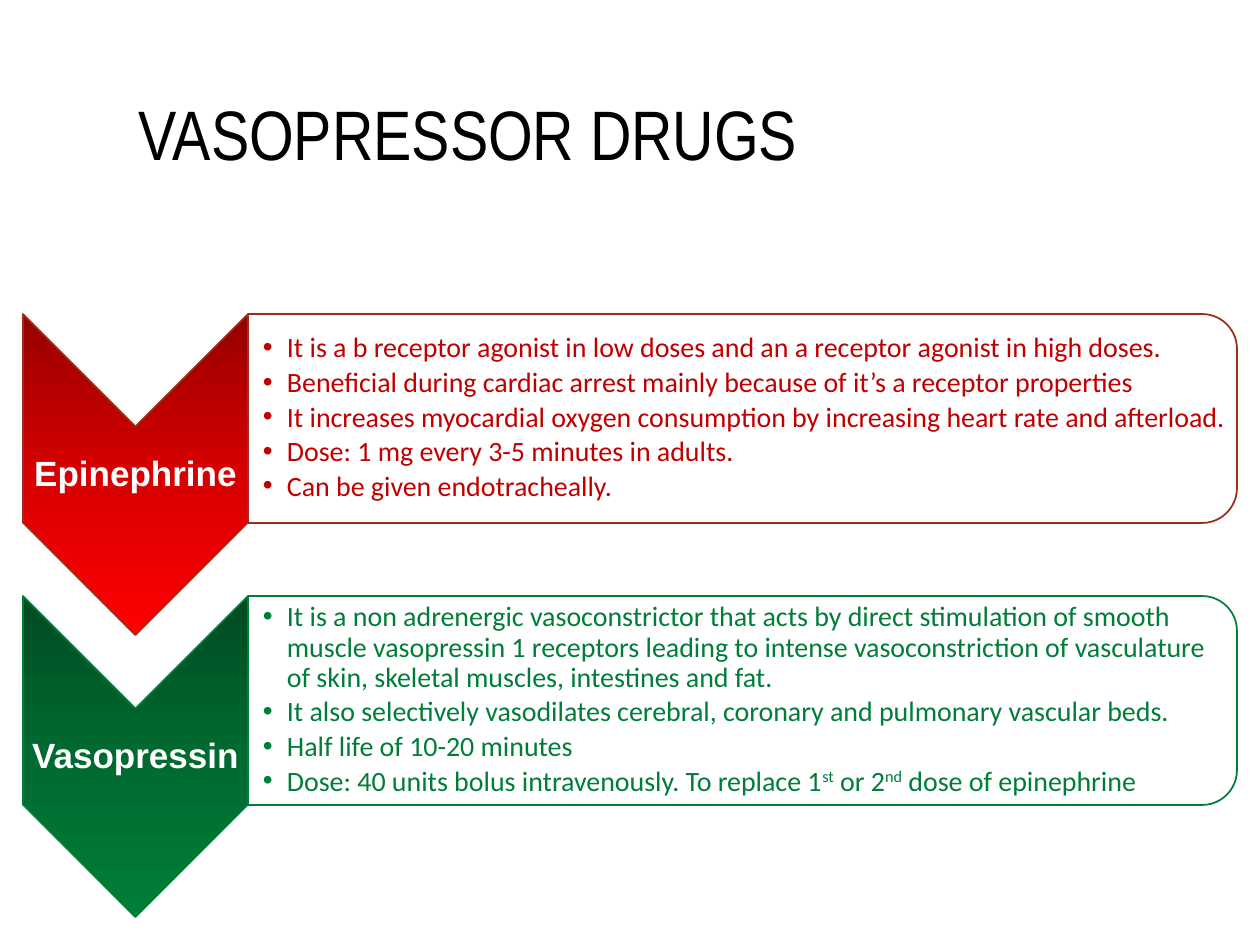
from lxml.etree import SubElement as Sub
from pptx import Presentation
from pptx.dml.color import RGBColor
from pptx.enum.shapes import MSO_SHAPE as Shape
from pptx.enum.text import MSO_ANCHOR as Anchor, PP_ALIGN as Align
from pptx.oxml import parse_xml
from pptx.oxml.ns import nsdecls, qn
from pptx.util import Emu, Pt

WHITE = RGBColor(0xFF, 0xFF, 0xFF)
BLACK = RGBColor(0, 0, 0)
RUST = RGBColor(0x9B, 0x2D, 0x1F)
RED = RGBColor(0xC0, 0, 0)
REDS = [RGBColor(0x97, 0, 0), RGBColor(0xD7, 0, 0), RGBColor(0xFF, 0, 0)]
GREEN = RGBColor(0, 0x7E, 0x39)
GREENS = [RGBColor(0, 0x4B, 0x22), RGBColor(0, 0x6A, 0x30), GREEN]

TOP, STEP = 314, 282

EPI = [
    ["It is a b receptor agonist in low doses and an a receptor agonist in high doses."],
    ["Beneficial during cardiac arrest mainly because of it’s a receptor properties"],
    ["It increases myocardial oxygen consumption by increasing heart rate and afterload."],
    ["Dose: 1 mg every 3-5 minutes in adults."],
    ["Can be given endotracheally."],
]
VASO = [
    ["It is a non adrenergic vasoconstrictor that acts by direct stimulation of smooth "
     "muscle vasopressin 1 receptors leading to intense vasoconstriction of vasculature "
     "of skin, skeletal muscles, intestines and fat."],
    ["It also selectively vasodilates cerebral, coronary and pulmonary vascular beds."],
    ["Half life of 10-20 minutes"],
    ["Dose: 40 units bolus intravenously. To replace 1", "st", " or 2", "nd",
     " dose of epinephrine"],
]
DRUGS = [
    ("Epinephrine", EPI, REDS, RUST, RED),
    ("Vasopressin", VASO, GREENS, GREEN, GREEN),
]


def px(n):
    """Turn pixels into EMU."""
    return Emu(round(n * 914400 / 126))


def add_turned(slide, kind, x, y, w, h, line):
    """Add a shape turned a quarter right that covers the given box."""
    left, top = x + (w - h) / 2, y + (h - w) / 2
    shape = slide.shapes.add_shape(kind, px(left), px(top), px(h), px(w))
    shape.rotation = 90
    shape.shadow.inherit = False
    shape.fill.solid()
    shape.fill.fore_color.rgb = WHITE
    shape.line.color.rgb = line
    shape.line.width = Pt(1)
    return shape


def shade(shape, tones):
    """Fill a shape with evenly spaced tones from top to bottom."""
    gap = 100000 // (len(tones) - 1)
    stops = "".join(f'<a:gs pos="{i * gap}"><a:srgbClr val="{tone}"/></a:gs>'
                    for i, tone in enumerate(tones))
    grad = parse_xml(f'<a:gradFill {nsdecls("a")} rotWithShape="0"><a:gsLst>{stops}'
                     '</a:gsLst><a:lin ang="5400000" scaled="0"/></a:gradFill>')
    props = shape.fill._xPr
    props.replace(props.find(qn("a:solidFill")), grad)


def add_box(slide, x, y, w, h, inset, edge):
    """Add a wrapped, middle-anchored text frame."""
    frame = slide.shapes.add_textbox(px(x), px(y), px(w), px(h)).text_frame
    frame.word_wrap = True
    frame.vertical_anchor = Anchor.MIDDLE
    frame.margin_left = px(inset)
    frame.margin_right = frame.margin_top = frame.margin_bottom = px(edge)
    return frame


def add_run(para, text, font, size, color, bold=False):
    """Add one styled run and return it."""
    para.line_spacing = 0.9
    run = para.add_run()
    run.text = text
    run.font.name = font
    run.font.size = Pt(size)
    run.font.color.rgb = color
    run.font.bold = bold
    return run


def add_list(frame, items, color):
    """Fill a frame with bullets, raising every second run."""
    for i, parts in enumerate(items):
        para = frame.add_paragraph() if i else frame.paragraphs[0]
        para.space_after = Pt(2.5)
        props = para._p.get_or_add_pPr()
        props.set("marL", str(px(24)))
        props.set("indent", str(-px(24)))
        Sub(props, qn("a:buFont"), typeface="Arial")
        Sub(props, qn("a:buChar"), char="•")
        for j, part in enumerate(parts):
            run = add_run(para, part, "Calibri", 16, color)
            if j % 2:
                run.font._element.set("baseline", "30000")


def add_drug(slide, y, name, items, tones, line, color):
    """Add an arrow with its name and the panel of facts beside it."""
    shade(add_turned(slide, Shape.CHEVRON, 23, y, 225, 321, line), tones)
    para = add_box(slide, 23, y + 113, 225, 96, 1, 1).paragraphs[0]
    para.alignment = Align.CENTER
    add_run(para, name, "Arial", 20, WHITE, True)
    add_turned(slide, Shape.ROUND_2_SAME_RECTANGLE, 248, y, 989, 209, line)
    add_list(add_box(slide, 248, y + 10, 979, 188, 15, 1), items, color)


def main():
    """Build the slide and save it."""
    deck = Presentation()
    deck.slide_width, deck.slide_height = px(1260), px(945)
    slide = deck.slides.add_slide(deck.slide_layouts[6])
    title = add_box(slide, 126, 58, 1008, 159, 13, 6)
    add_run(title.paragraphs[0], "VASOPRESSOR DRUGS", "Arial Narrow", 40, BLACK)
    for i, drug in enumerate(DRUGS):
        add_drug(slide, TOP + i * STEP, *drug)
    deck.save("out.pptx")


if __name__ == "__main__":
    main()
